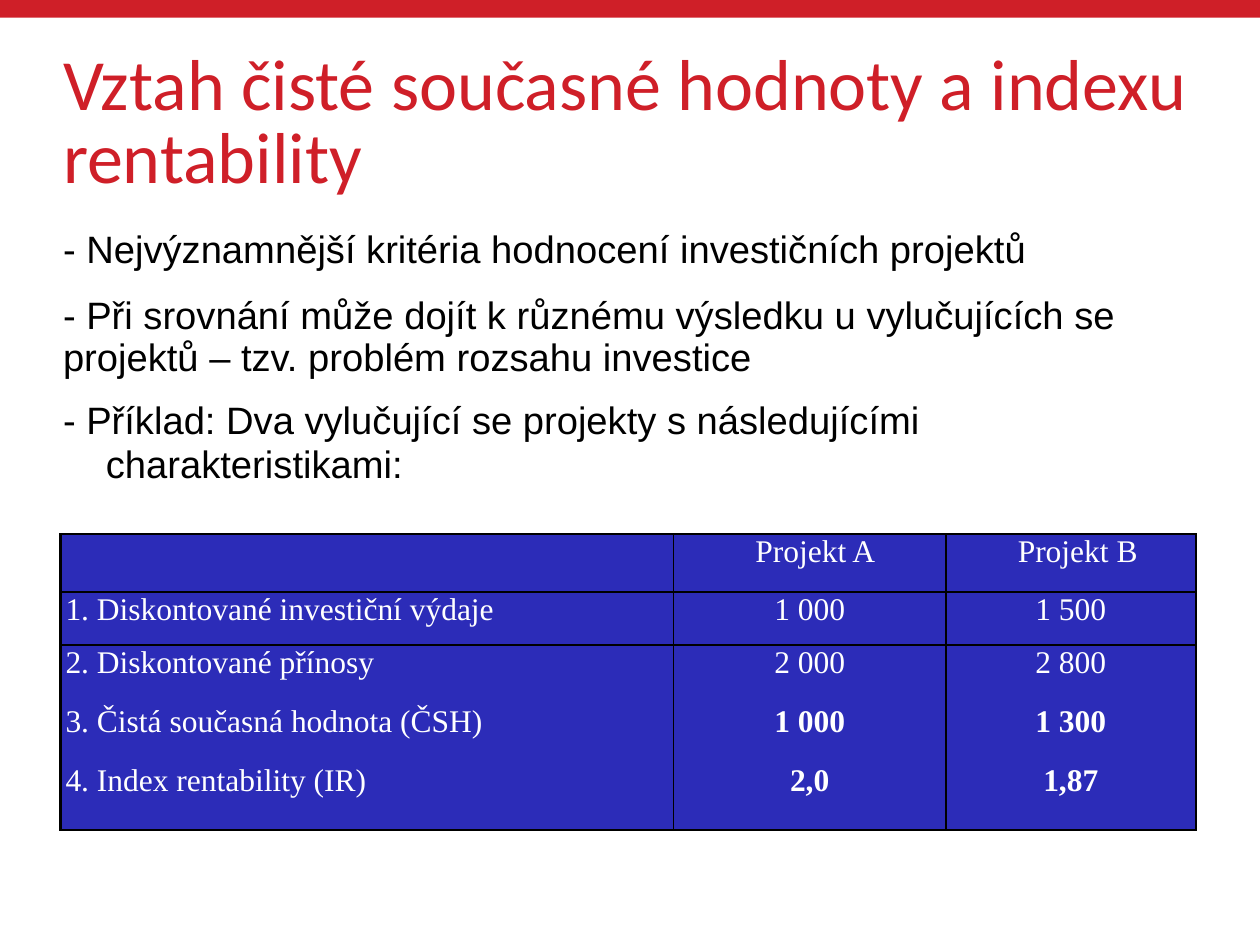
import pptx
import pptx.util
import pptx.dml.color
import pptx.enum.shapes
import pptx.enum.text
import lxml.etree
from collections import namedtuple
from dataclasses import dataclass

RGB = pptx.dml.color.RGBColor
Pt = pptx.util.Pt
ALIGN = pptx.enum.text.PP_ALIGN
ANCHOR = pptx.enum.text.MSO_ANCHOR
Box = namedtuple("Box", "x y w h")


@dataclass(frozen=True)
class Theme:
    red: str = "CF1F28"
    black: str = "000000"
    white: str = "FFFFFF"
    blue: str = "2C2CB8"
    title_font: str = "Calibri"
    body_font: str = "Arial"
    table_font: str = "Times New Roman"
    title_size: float = 41.2
    body_size: float = 21.8
    table_size: float = 18
    outer_line: float = 1.5
    inner_line: float = 1


THEME = Theme()

# The slide is a grid of 100 columns and 75 rows
GRID = pptx.util.Inches(0.1)
COLUMNS, ROWS = 100, 75

TITLE = ["Vztah čisté současné hodnoty a indexu", "rentability"]

# Text, left indent in columns, line spacing and space before in points
BODY = [
    ("- Nejvýznamnější kritéria hodnocení investičních projektů", 0.1, None, 0),
    ("- Při srovnání může dojít k různému výsledku u vylučujících se "
     "projektů – tzv. problém rozsahu investice", 0.1, 24.3, 13.2),
    ("- Příklad: Dva vylučující se projekty s následujícími", 0.1, 25.2, 10.4),
    ("charakteristikami:", 3.5, 25.2, 0),
]

TABLE = [
    ("", "Projekt A", "Projekt B"),
    ("1. Diskontované investiční výdaje", "1 000", "1 500"),
    ("2. Diskontované přínosy", "2 000", "2 800"),
    ("3. Čistá současná hodnota (ČSH)", "1 000", "1 300"),
    ("4. Index rentability (IR)", "2,0", "1,87"),
]
COL_SHARES = (0.54, 0.24, 0.22)
ROW_HEIGHTS = (4.6, 4.2, 4.7, 4.7, 5.3)
HEADER_INDENTS = (0, 6.5, 5.7)
LABEL_INDENT = 0.4
FIRST_BOLD_ROW = 3
RULED_ROWS = (0, 1)


def units(n):
    return int(n * GRID)


def add_run(p, text, font, size, color, bold=False):
    r = p.add_run()
    r.text = text
    r.font.name, r.font.size, r.font.bold = font, Pt(size), bold
    r.font.color.rgb = RGB.from_string(color)


def set_indent(p, left):
    pPr = p._p.get_or_add_pPr()
    pPr.set("marL", str(units(left)))
    pPr.set("indent", "0")
    return pPr


def prepare_frame(shape, box, anchor):
    shape.left, shape.top, shape.width, shape.height = map(units, box)
    tf = shape.text_frame
    tf.margin_left = tf.margin_top = tf.margin_right = tf.margin_bottom = 0
    tf.word_wrap = True
    tf.auto_size = pptx.enum.text.MSO_AUTO_SIZE.NONE
    tf.vertical_anchor = anchor
    return tf


def add_paragraph(tf, index, left, spacing, before):
    p = tf.paragraphs[0] if index == 0 else tf.add_paragraph()
    pPr = set_indent(p, left)
    lxml.etree.SubElement(pPr, pptx.oxml.ns.qn("a:buNone"))
    p.alignment = ALIGN.LEFT
    p.space_before = Pt(before)
    if spacing:
        p.line_spacing = Pt(spacing)
    return p


def add_band(s, box):
    band = s.shapes.add_shape(pptx.enum.shapes.MSO_SHAPE.RECTANGLE, *map(units, box))
    band.shadow.inherit = False
    band.fill.solid()
    band.fill.fore_color.rgb = RGB.from_string(THEME.red)
    band.line.fill.background()


def fill_title(s, box):
    tf = prepare_frame(s.shapes.title, box, ANCHOR.MIDDLE)
    for i, line in enumerate(TITLE):
        p = add_paragraph(tf, i, 0.1, 42, 0)
        add_run(p, line, THEME.title_font, THEME.title_size, THEME.red)


def fill_body(s, box):
    tf = prepare_frame(s.placeholders[1], box, ANCHOR.TOP)
    for i, (text, left, spacing, before) in enumerate(BODY):
        p = add_paragraph(tf, i, left, spacing, before)
        add_run(p, text, THEME.body_font, THEME.body_size, THEME.black)


def set_border(cell, side, width):
    tcPr = cell._tc.get_or_add_tcPr()
    qn = pptx.oxml.ns.qn
    ln = lxml.etree.SubElement(tcPr, qn("a:ln" + side), w=str(Pt(width)))
    if width:
        fill = lxml.etree.SubElement(ln, qn("a:solidFill"))
        lxml.etree.SubElement(fill, qn("a:srgbClr"), val=THEME.black)
    else:
        lxml.etree.SubElement(ln, qn("a:noFill"))


def style_cell(cell, row, col):
    outer, inner = THEME.outer_line, THEME.inner_line
    last_row, last_col = len(TABLE) - 1, len(COL_SHARES) - 1
    set_border(cell, "L", outer if col == 0 else inner)
    set_border(cell, "R", outer if col == last_col else inner)
    set_border(cell, "T", outer if row == 0 else inner if row - 1 in RULED_ROWS else 0)
    set_border(cell, "B", outer if row == last_row else inner if row in RULED_ROWS else 0)
    cell.fill.solid()
    cell.fill.fore_color.rgb = RGB.from_string(THEME.blue)
    cell.margin_left = cell.margin_top = cell.margin_right = cell.margin_bottom = 0


def add_project_table(s, box):
    shape = s.shapes.add_table(len(TABLE), len(COL_SHARES), *map(units, box))
    table = shape.table
    table.first_row = table.horz_banding = False
    for column, share in zip(table.columns, COL_SHARES):
        column.width = units(box.w * share)
    for row, height in zip(table.rows, ROW_HEIGHTS):
        row.height = units(height)
    for i, texts in enumerate(TABLE):
        for j, text in enumerate(texts):
            cell = table.cell(i, j)
            style_cell(cell, i, j)
            p = cell.text_frame.paragraphs[0]
            if i == 0:
                set_indent(p, HEADER_INDENTS[j])
            elif j == 0:
                set_indent(p, LABEL_INDENT)
            else:
                p.alignment = ALIGN.CENTER
            if text:
                add_run(p, text, THEME.table_font, THEME.table_size, THEME.white,
                        bold=j > 0 and i >= FIRST_BOLD_ROW)


def main():
    prs = pptx.Presentation()
    prs.slide_width, prs.slide_height = units(COLUMNS), units(ROWS)
    s = prs.slides.add_slide(prs.slide_layouts[1])
    add_band(s, Box(0, 0, COLUMNS, 1.4))
    fill_title(s, Box(4.9, 4, 90.3, 11.8))
    fill_body(s, Box(4.9, 17.9, 85.1, 20.6))
    add_project_table(s, Box(4.8, 42.4, 90.1, sum(ROW_HEIGHTS)))
    prs.save("out.pptx")


if __name__ == "__main__":
    main()
